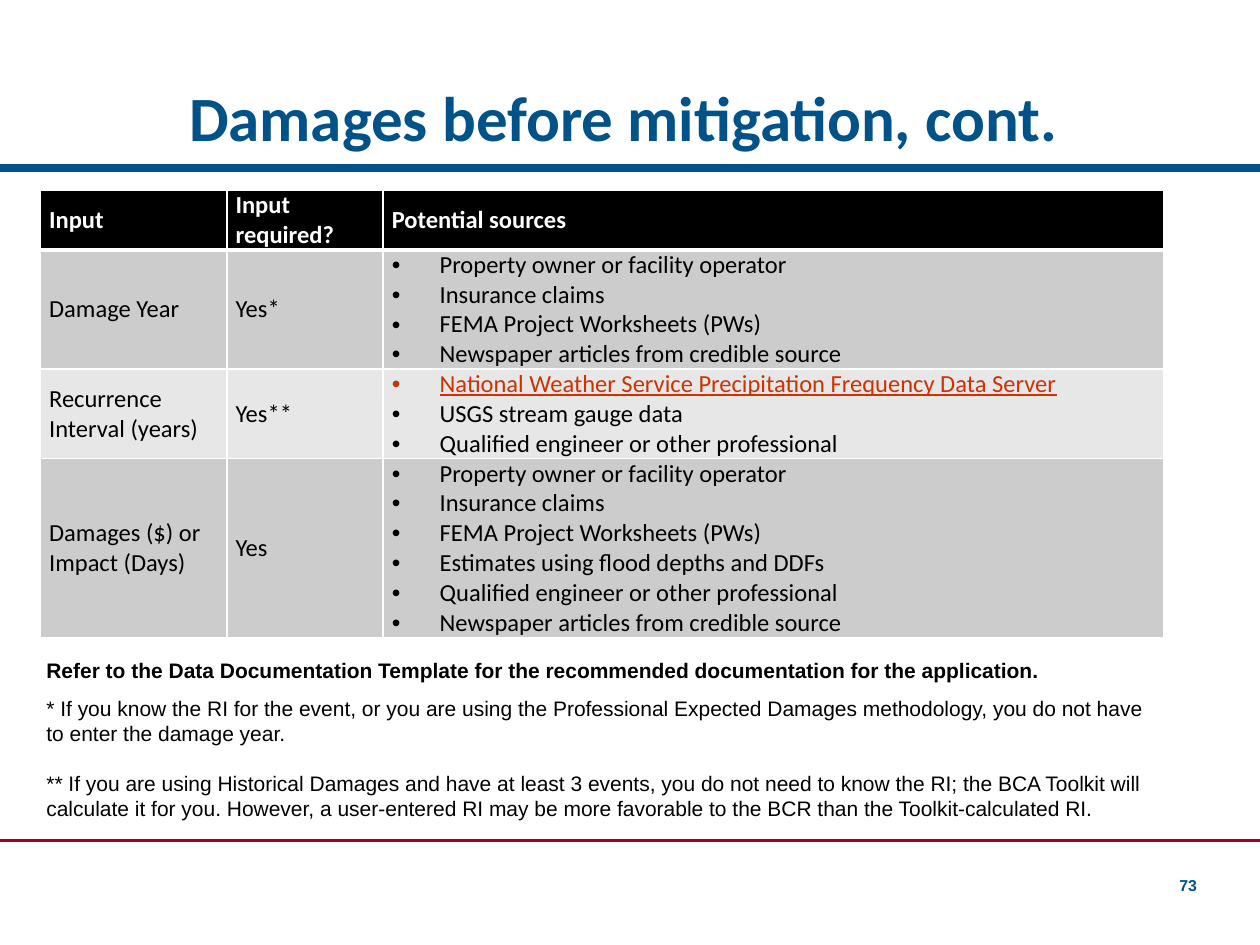
from dataclasses import dataclass

from lxml import etree
from pptx import Presentation
from pptx.dml.color import RGBColor
from pptx.enum.shapes import MSO_CONNECTOR
from pptx.enum.text import MSO_ANCHOR, PP_ALIGN
from pptx.oxml.ns import qn
from pptx.util import Inches, Pt

LEFT, RIGHT = PP_ALIGN.LEFT, PP_ALIGN.RIGHT
TOP, MIDDLE, BOTTOM = MSO_ANCHOR.TOP, MSO_ANCHOR.MIDDLE, MSO_ANCHOR.BOTTOM
STRAIGHT = MSO_CONNECTOR.STRAIGHT


@dataclass(frozen=True)
class Theme:
    blue: str = "005288"
    red: str = "A50021"
    link: str = "CC3300"
    black: str = "000000"
    white: str = "FFFFFF"
    bands: tuple = ("CCCCCC", "E7E7E7")
    heading_font: str = "Calibri"
    note_font: str = "Arial"
    title_size: int = 36
    table_size: int = 14
    note_size: int = 12
    number_size: int = 9


THEME = Theme()

HEADERS = ["Input", "Input required?", "Potential sources"]
OWNER = "Property owner or facility operator"
CLAIMS = "Insurance claims"
WORKSHEETS = "FEMA Project Worksheets (PWs)"
NEWS = "Newspaper articles from credible source"
ENGINEER = "Qualified engineer or other professional"
DATA_SERVER = "National Weather Service Precipitation Frequency Data Server"
INPUTS = [
    ("Damage Year", "Yes*", [OWNER, CLAIMS, WORKSHEETS, NEWS]),
    ("Recurrence Interval (years)", "Yes**",
     [DATA_SERVER, "USGS stream gauge data", ENGINEER]),
    ("Damages ($) or Impact (Days)", "Yes",
     [OWNER, CLAIMS, WORKSHEETS, "Estimates using flood depths and DDFs",
      ENGINEER, NEWS]),
]
COLUMN_WIDTHS = [1.48, 1.24, 6.2]
ROW_HEIGHTS = [0.47, 0.94, 0.71, 1.42]

REFERENCE = ("Refer to the Data Documentation Template for the recommended "
             "documentation for the application.")
FOOTNOTES = [
    "* If you know the RI for the event, or you are using the Professional "
    "Expected Damages methodology, you do not have to enter the damage year.",
    "** If you are using Historical Damages and have at least 3 events, you do "
    "not need to know the RI; the BCA Toolkit will calculate it for you. However, "
    "a user-entered RI may be more favorable to the BCR than the "
    "Toolkit-calculated RI.",
]


def style(paragraph, font, size, color, bold=False):
    paragraph.font.name = font
    paragraph.font.size = Pt(size)
    paragraph.font.bold = bold
    paragraph.font.color.rgb = RGBColor.from_string(color)


def set_insets(frame, left, top, right, bottom):
    frame.margin_left, frame.margin_top = Inches(left), Inches(top)
    frame.margin_right, frame.margin_bottom = Inches(right), Inches(bottom)


def add_rule(slide, y, color, width):
    rule = slide.shapes.add_connector(STRAIGHT, 0, Inches(y), Inches(10), Inches(y))
    rule.line.color.rgb = RGBColor.from_string(color)
    rule.line.width = Pt(width)
    etree.SubElement(rule._element.spPr, qn("a:effectLst"))


def set_title(slide, text):
    title = slide.shapes.title
    title.left, title.top = Inches(1.5), Inches(0)
    title.width, title.height = Inches(8), Inches(1.28)
    frame = title.text_frame
    frame.text = text
    frame.vertical_anchor = BOTTOM
    set_insets(frame, 0, 0.05, 0.1, 0.05)
    paragraph = frame.paragraphs[0]
    paragraph.alignment = LEFT
    paragraph.line_spacing = 0.9
    style(paragraph, THEME.heading_font, THEME.title_size, THEME.blue, True)


def add_text(slide, box, lines, size, color, bold=False, align=LEFT, anchor=TOP, gap=0):
    shape = slide.shapes.add_textbox(*map(Inches, box))
    frame = shape.text_frame
    frame.word_wrap = True
    frame.vertical_anchor = anchor
    frame.text = "\n".join(lines)
    for index, paragraph in enumerate(frame.paragraphs):
        paragraph.alignment = align
        if index and gap:
            paragraph.space_before = Pt(gap)
        style(paragraph, THEME.note_font, size, color, bold)
    return frame


def add_bullet(paragraph):
    properties = paragraph._p.get_or_add_pPr()
    properties.set("marL", str(Inches(0.38)))
    properties.set("indent", str(Inches(-0.38)))
    etree.SubElement(properties, qn("a:buFont"), typeface="Arial")
    etree.SubElement(properties, qn("a:buChar"), char="•")


def set_borders(cell, bottom_width):
    properties = cell._tc.get_or_add_tcPr()
    widths = {"a:lnL": 1, "a:lnR": 1, "a:lnT": 1, "a:lnB": bottom_width}
    for position, (side, width) in enumerate(widths.items()):
        line = etree.Element(qn(side), w=str(Pt(width)))
        fill = etree.SubElement(line, qn("a:solidFill"))
        etree.SubElement(fill, qn("a:srgbClr"), val=THEME.white)
        properties.insert(position, line)


def fill_cell(cell, lines, fill, color, header=False, bulleted=False):
    cell.vertical_anchor = MIDDLE
    set_insets(cell, 0.07, 0, 0.07, 0)
    cell.fill.solid()
    cell.fill.fore_color.rgb = RGBColor.from_string(fill)
    set_borders(cell, 3 if header else 1)
    cell.text_frame.text = "\n".join(lines)
    for paragraph, line in zip(cell.text_frame.paragraphs, lines):
        if bulleted:
            add_bullet(paragraph)
        is_link = line == DATA_SERVER
        style(paragraph, THEME.heading_font, THEME.table_size,
              THEME.link if is_link else color, header)
        if is_link:
            paragraph.font.underline = True


def add_inputs_table(slide):
    table = slide.shapes.add_table(
        len(ROW_HEIGHTS), len(COLUMN_WIDTHS), Inches(0.32), Inches(1.51),
        Inches(sum(COLUMN_WIDTHS)), Inches(sum(ROW_HEIGHTS))).table
    for column, width in zip(table.columns, COLUMN_WIDTHS):
        column.width = Inches(width)
    for row, height in zip(table.rows, ROW_HEIGHTS):
        row.height = Inches(height)
    for column, header in enumerate(HEADERS):
        fill_cell(table.cell(0, column), [header], THEME.black, THEME.white, header=True)
    for row, (name, required, sources) in enumerate(INPUTS, start=1):
        band = THEME.bands[(row - 1) % 2]
        for column, lines in enumerate([[name], [required], sources]):
            fill_cell(table.cell(row, column), lines, band, THEME.black,
                      bulleted=column == 2)


def main():
    presentation = Presentation()
    presentation.slide_width, presentation.slide_height = Inches(10), Inches(7.5)
    slide = presentation.slides.add_slide(presentation.slide_layouts[5])

    # Frame rules and title
    add_rule(slide, 1.33, THEME.blue, 4.5)
    add_rule(slide, 6.67, THEME.red, 1.5)
    set_title(slide, "Damages before mitigation, cont.")

    # Inputs and their sources
    add_inputs_table(slide)

    # Notes under the table
    add_text(slide, (0.27, 5.17, 9.1, 0.3), [REFERENCE], THEME.note_size,
             THEME.black, bold=True)
    add_text(slide, (0.27, 5.47, 9, 1.11), FOOTNOTES, THEME.note_size,
             THEME.black, gap=14)

    # Page number
    number = add_text(slide, (9.17, 6.9, 0.33, 0.25), ["73"], THEME.number_size,
                      THEME.blue, bold=True, align=RIGHT, anchor=BOTTOM)
    set_insets(number, 0, 0.05, 0, 0.05)

    presentation.save("out.pptx")


if __name__ == "__main__":
    main()
